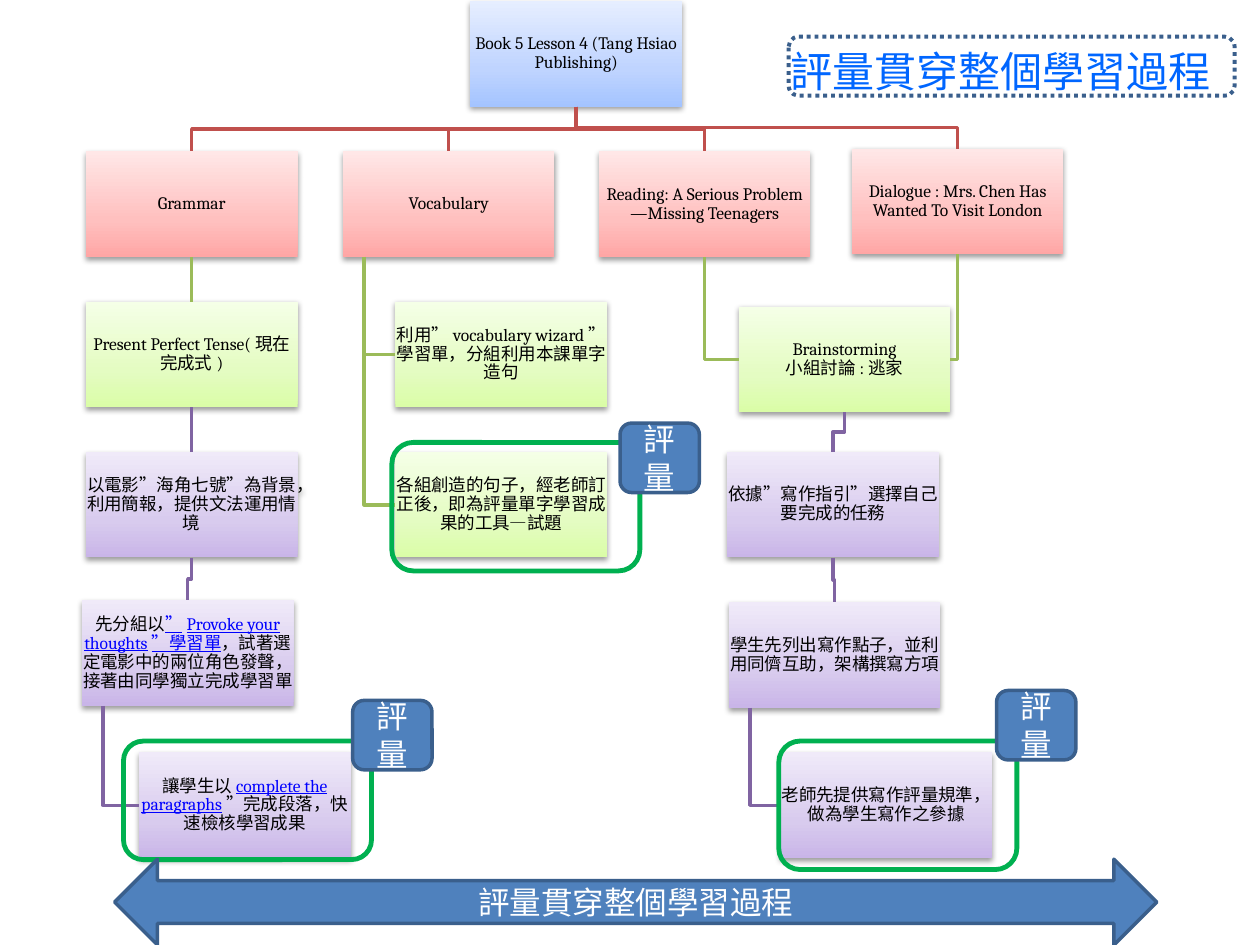
import copy

import lxml.etree
import pptx
import pptx.dml.color
import pptx.enum.dml
import pptx.enum.shapes
import pptx.enum.text
import pptx.oxml
import pptx.oxml.ns
import pptx.util

Cm, Pt = pptx.util.Cm, pptx.util.Pt
SHAPE = pptx.enum.shapes.MSO_SHAPE
ALIGN = pptx.enum.text.PP_ALIGN
MIDDLE = pptx.enum.text.MSO_ANCHOR.MIDDLE
BOX_W, BOX_H = 4.27, 2.13
INDENT = 0.43  # where a side branch leaves its parent
ROWS = [3.05 + 3.03 * i for i in range(5)]


class Theme:
    latin, asian = "Cambria", "Noto Sans CJK SC"
    small, medium, large = 10, 18, 24
    black, white = "000000", "FFFFFF"
    title, link, mark = "0066FF", "0000FF", "00B050"
    solid, edge = "4F81BD", "3A5F8C"
    # Gradient from bottom to top
    shades = {
        "blue": ("A4C4FF", "BFD4FF", "E6EEFF"),
        "red": ("FFA6A5", "FFC0BF", "FFE7E7"),
        "green": ("DAFDA7", "E4FCC2", "F5FFE7"),
        "purple": ("C9B5E8", "D8CBEE", "F0EAF9"),
    }
    lines = {"red": "C0504D", "green": "9BBB59", "purple": "8064A2"}


def rgb(code):
    return pptx.dml.color.RGBColor.from_string(code)


class Chart:
    def __init__(self, theme, slide):
        self.theme, self.slide = theme, slide
        self.tone = {}  # box id -> tone

    def font(self, para, size, color, align, latin=None):
        para.alignment = align
        font = para.font
        font.size, font.name = Pt(size), latin or self.theme.latin
        font.color.rgb = rgb(color)
        props = para._p.get_or_add_pPr().get_or_add_defRPr()
        east = lxml.etree.SubElement(props, pptx.oxml.ns.qn("a:ea"))
        east.set("typeface", self.theme.asian)

    def title(self, text, x, y, w, h):
        head = self.slide.shapes.title
        head.left, head.top, head.width, head.height = map(Cm, (x, y, w, h))
        head.text_frame.vertical_anchor = MIDDLE
        para = head.text_frame.paragraphs[0]
        para.text = text
        self.font(para, self.theme.large, self.theme.title, ALIGN.RIGHT,
                  self.theme.asian)

    def shape(self, kind, x, y, w, h):
        item = self.slide.shapes.add_shape(kind, Cm(x), Cm(y), Cm(w), Cm(h))
        item.shadow.inherit = False
        return item

    def frame(self, x, y, w, h, color, width, dash=None):
        item = self.shape(SHAPE.ROUNDED_RECTANGLE, x, y, w, h)
        item.fill.background()
        item.line.color.rgb, item.line.width = rgb(color), Pt(width)
        if dash:
            item.line.dash_style = dash

    def label(self, kind, text, x, y, w, h):
        item = self.shape(kind, x, y, w, h)
        item.fill.solid()
        item.fill.fore_color.rgb = rgb(self.theme.solid)
        item.line.color.rgb, item.line.width = rgb(self.theme.edge), Pt(2)
        item.text_frame.vertical_anchor = MIDDLE
        para = item.text_frame.paragraphs[0]
        para.text = text
        self.font(para, self.theme.medium, self.theme.white, ALIGN.CENTER)

    def box(self, tone, x, y, *parts):
        """Parts alternate between plain text and link text."""
        item = self.shape(SHAPE.RECTANGLE, x, y, BOX_W, BOX_H)
        self.tone[item.shape_id] = tone
        item.line.fill.background()
        self.shade(item, self.theme.shades[tone])
        self.drop(item)
        body = item.text_frame
        body.vertical_anchor = MIDDLE
        body.margin_left = body.margin_right = Cm(0.02)
        body.margin_top = body.margin_bottom = Cm(0.02)
        para = body.paragraphs[0]
        para.line_spacing = 0.9
        if len(parts) == 1:
            para.text = parts[0]
        else:
            for i, part in enumerate(parts):
                run = para.add_run()
                run.text = part
                if i % 2:
                    run.font.color.rgb = rgb(self.theme.link)
                    run.font.underline = True
        self.font(para, self.theme.small, self.theme.black, ALIGN.CENTER)
        return item

    def shade(self, item, colors):
        item.fill.gradient()
        item.fill.gradient_angle = 90
        first = item.fill.gradient_stops[0]._gs
        first.addnext(copy.deepcopy(first))
        stops = item.fill.gradient_stops
        for stop, color, place in zip(stops, colors, (0, 0.35, 1)):
            stop.color.rgb, stop.position = rgb(color), place

    def drop(self, item):
        effects = item._element.spPr.find(pptx.oxml.ns.qn("a:effectLst"))
        effects.append(pptx.oxml.parse_xml(
            f'<a:outerShdw {pptx.oxml.ns.nsdecls("a")} blurRad="40000" '
            'dist="20000" dir="5400000" rotWithShape="0"><a:srgbClr '
            f'val="{self.theme.black}"><a:alpha val="38000"/></a:srgbClr>'
            '</a:outerShdw>'))

    def ink(self, item, tone):
        item.line.color.rgb = rgb(self.theme.lines[tone])
        item.line.width = Pt(2)

    def route(self, tone, *points):
        maker = self.slide.shapes.build_freeform(*points[0], scale=1.0)
        maker.add_line_segments(points[1:], close=False)
        item = maker.convert_to_shape()
        item.shadow.inherit = False
        item.fill.background()
        self.ink(item, tone)

    def down(self, start, end):
        """Join a bottom side to a top side, bending half way."""
        tone = self.tone[end.shape_id]
        x1, y1 = start.left + start.width // 2, start.top + start.height
        x2, y2 = end.left + end.width // 2, end.top
        if x1 == x2:
            line = self.slide.shapes.add_connector(
                pptx.enum.shapes.MSO_CONNECTOR.STRAIGHT, x1, y1, x2, y2)
            line.begin_connect(start, 2)
            line.end_connect(end, 0)
            lxml.etree.SubElement(line._element.spPr,
                                  pptx.oxml.ns.qn("a:effectLst"))
            self.ink(line, tone)
        else:
            mid = (y1 + y2) // 2
            self.route(tone, (x1, y1), (x1, mid), (x2, mid), (x2, y2))

    def side(self, start, end, inset=INDENT):
        """Drop from a bottom side, then turn into the nearer flank."""
        x, y = start.left + Cm(inset), end.top + end.height // 2
        flank = end.left if x < end.left else end.left + end.width
        self.route(self.tone[end.shape_id],
                   (x, start.top + start.height), (x, y), (flank, y))


def main():
    deck = pptx.Presentation()
    deck.slide_width, deck.slide_height = Cm(25.4), Cm(19.05)
    art = Chart(Theme(), deck.slides.add_slide(deck.slide_layouts[5]))
    theme, process = art.theme, "評量貫穿整個學習過程"
    art.title(process, 15.29, 0.53, 9.37, 1.8)

    # Root and the four topics
    root = art.box("blue", 9.48, 0.02, "Book 5 Lesson 4 (Tang Hsiao Publishing)")
    grammar = art.box("red", 1.73, ROWS[0], "Grammar")
    vocab = art.box("red", 6.91, ROWS[0], "Vocabulary")
    reading = art.box("red", 12.07, ROWS[0],
                      "Reading: A Serious Problem—Missing Teenagers")
    talk = art.box("red", 17.17, 3,
                   "Dialogue : Mrs. Chen Has Wanted To Visit London")

    # Grammar branch
    tense = art.box("green", 1.73, ROWS[1], "Present Perfect Tense(現在完成式)")
    film = art.box("purple", 1.73, ROWS[2],
                   "以電影”海角七號”為背景，利用簡報，提供文法運用情境")
    group = art.box("purple", 1.65, 12.1, "先分組以",
                    "”Provoke your thoughts”學習單",
                    "，試著選定電影中的兩位角色發聲，接著由同學獨立完成學習單")
    check = art.box("purple", 2.8, ROWS[4], "讓學生以",
                    "complete the paragraphs", "”完成段落，快速檢核學習成果")

    # Vocabulary branch
    wizard = art.box("green", 7.97, ROWS[1],
                     "利用”vocabulary wizard” 學習單，分組利用本課單字造句")
    quiz = art.box("green", 7.97, ROWS[2],
                   "各組創造的句子，經老師訂正後，即為評量單字學習成果的工具—試題")

    # Reading and dialogue branch
    storm = art.box("green", 14.89, 6.18, "Brainstorming\v小組討論:逃家")
    task = art.box("purple", 14.66, ROWS[2],
                   "依據”寫作指引”選擇自己要完成的任務")
    draft = art.box("purple", 14.69, ROWS[3],
                    "學生先列出寫作點子，並利用同儕互助，架構撰寫方項")
    rubric = art.box("purple", 15.73, ROWS[4],
                     "老師先提供寫作評量規準，做為學生寫作之參據")

    # Links
    for pair in ((root, grammar), (root, vocab), (root, reading), (root, talk),
                 (grammar, tense), (tense, film), (film, group),
                 (storm, task), (task, draft)):
        art.down(*pair)
    for pair in ((group, check), (vocab, wizard), (vocab, quiz),
                 (draft, rubric)):
        art.side(*pair)
    for topic in (reading, talk):
        art.side(topic, storm, BOX_W / 2)

    # Title border, assessment frames and badges
    art.frame(15.9, 0.74, 8.99, 1.19, theme.edge, 2.25,
              pptx.enum.dml.MSO_LINE.ROUND_DOT)
    for spot in ((2.49, 14.94, 5, 2.39), (7.9, 8.92, 5, 2.59),
                 (15.7, 14.94, 4.8, 2.59)):
        art.frame(*spot, theme.mark, 2.75)
    for x, y in ((7.11, 14.12), (12.5, 8.53), (20.09, 13.92)):
        art.label(SHAPE.ROUNDED_RECTANGLE, "評量", x, y, 1.6, 1.4)

    # Closing arrow
    art.label(SHAPE.LEFT_RIGHT_ARROW, process, 2.31, 17.32, 21.01, 1.73)
    deck.save("out.pptx")


if __name__ == "__main__":
    main()
